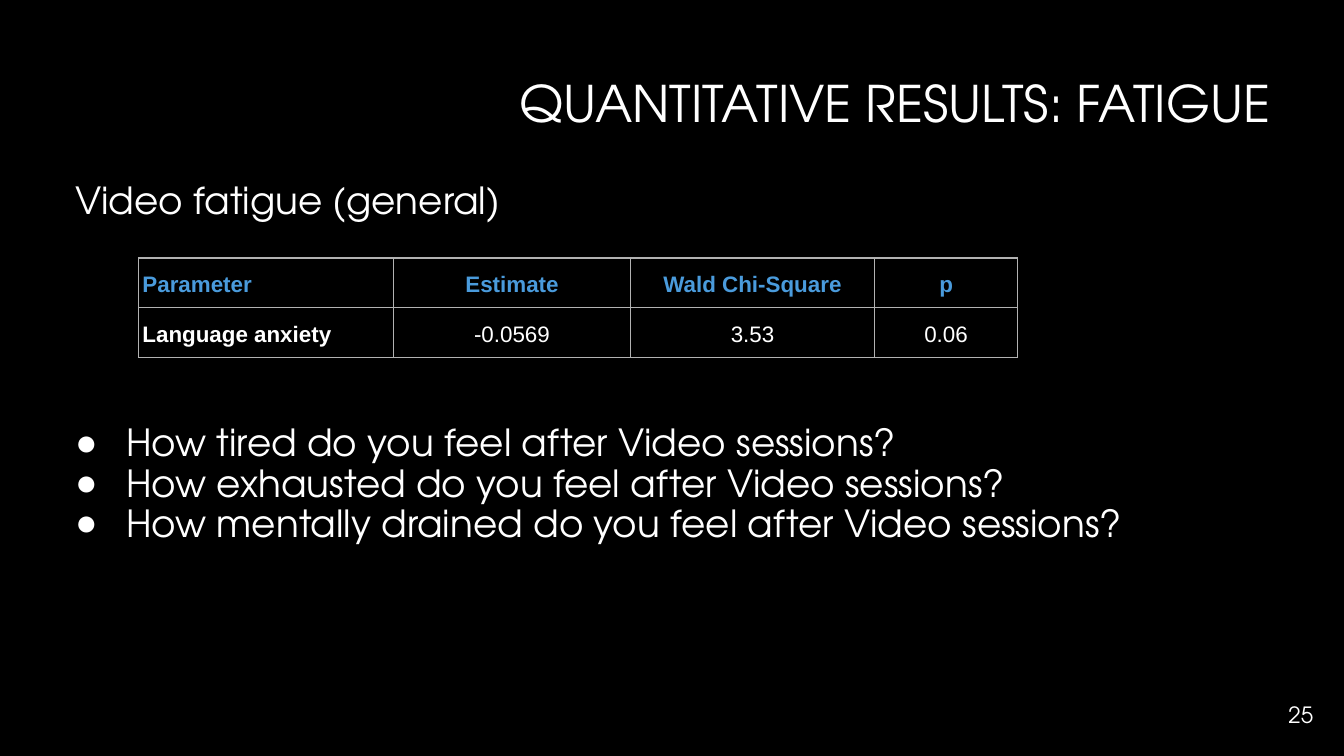
from lxml import etree
from pptx import Presentation
from pptx.dml.color import RGBColor
from pptx.enum.text import MSO_ANCHOR as Anchor, PP_ALIGN as Align
from pptx.oxml.ns import qn
from pptx.util import Inches, Pt

COLORS = {"back": "000000", "text": "FFFFFF", "accent": "4A9BDC", "rule": "B2B2B2"}


class SlideBuilder:
    text_font = "TeX Gyre Adventor"
    table_font = "Arial"

    def __init__(self, deck):
        self.slide = deck.slides.add_slide(deck.slide_layouts[6])
        fill = self.slide.background.fill
        fill.solid()
        fill.fore_color.rgb = self.color("back")

    def color(self, name):
        return RGBColor.from_string(COLORS[name])

    def style(self, para, size, font, color="text", bold=False):
        for span in para.runs:
            span.font.size = Pt(size)
            span.font.name = font
            span.font.bold = bold
            span.font.color.rgb = self.color(color)

    def text(self, lines, place, size, align=Align.LEFT, anchor=Anchor.TOP,
             spacing=0.9, right_inset=0.1):
        box = self.slide.shapes.add_textbox(*map(Inches, place))
        frame = box.text_frame
        frame.word_wrap = True
        frame.vertical_anchor = anchor
        frame.margin_left = frame.margin_top = frame.margin_bottom = Inches(0.1)
        frame.margin_right = Inches(right_inset)
        frame.text = "\n".join(lines)
        for para in frame.paragraphs:
            para.alignment = align
            para.line_spacing = spacing
            self.style(para, size, self.text_font)
        return frame.paragraphs

    def indent(self, para, left, first=0, bullet=None):
        props = para._p.get_or_add_pPr()
        props.set("marL", str(Inches(left)))
        props.set("indent", str(Inches(first)))
        if bullet:
            etree.SubElement(props, qn("a:buFont")).set("typeface", self.table_font)
            etree.SubElement(props, qn("a:buChar")).set("char", bullet)

    def border(self, cell):
        props = cell._tc.get_or_add_tcPr()
        for index, side in enumerate(("lnL", "lnR", "lnT", "lnB")):
            line = etree.Element(qn(f"a:{side}"), w=str(Pt(0.75)))
            fill = etree.SubElement(line, qn("a:solidFill"))
            etree.SubElement(fill, qn("a:srgbClr"), val=COLORS["rule"])
            props.insert(index, line)

    def table(self, rows, left, top, widths, height):
        frame = self.slide.shapes.add_table(
            len(rows), len(widths), Inches(left), Inches(top),
            Inches(sum(widths)), Inches(height * len(rows)))
        table = frame.table
        for column, width in zip(table.columns, widths):
            column.width = Inches(width)
        for r, values in enumerate(rows):
            table.rows[r].height = Inches(height)
            for c, value in enumerate(values):
                cell = table.cell(r, c)
                cell.fill.solid()
                cell.fill.fore_color.rgb = self.color("back")
                cell.vertical_anchor = Anchor.MIDDLE
                cell.margin_left = cell.margin_right = Inches(0.03)
                cell.margin_top = cell.margin_bottom = Inches(0.03)
                cell.text_frame.text = value
                para = cell.text_frame.paragraphs[0]
                para.alignment = Align.CENTER if c else Align.LEFT
                para.line_spacing = 1.15
                self.style(para, 12, self.table_font,
                           "text" if r else "accent", r == 0 or c == 0)
                self.border(cell)


def main():
    # Widescreen deck, 16:9
    deck = Presentation()
    deck.slide_width, deck.slide_height = Inches(10), Inches(10 * 9 / 16)
    page = SlideBuilder(deck)

    # Title
    page.text(["QUANTITATIVE RESULTS: FATIGUE"], (0.34, 0.49, 9.32, 0.63), 27,
              Align.RIGHT, right_inset=0.21)

    # Heading and questions, with room between them for the table
    states = ["tired", "exhausted", "mentally drained"]
    questions = [f"How {state} do you feel after Video sessions?" for state in states]
    heading, *bullets = page.text(["Video fatigue (general)", *questions],
                                  (0.34, 1.26, 9.32, 3.74), 20)
    page.indent(heading, 0.12)
    for para in bullets:
        page.indent(para, 0.5, -0.38, "●")
    bullets[0].space_before = Pt(108)

    # Results table
    page.table([["Parameter", "Estimate", "Wald Chi-Square", "p"],
                ["Language anxiety", "-0.0569", "3.53", "0.06"]],
               1.03, 1.92, [1.9, 1.76, 1.82, 1.06], 0.37)

    # Page number
    page.text(["25"], (9.27, 5.1, 0.6, 0.43), 12, Align.RIGHT, Anchor.MIDDLE, 1.0)

    deck.save("out.pptx")


if __name__ == "__main__":
    main()
